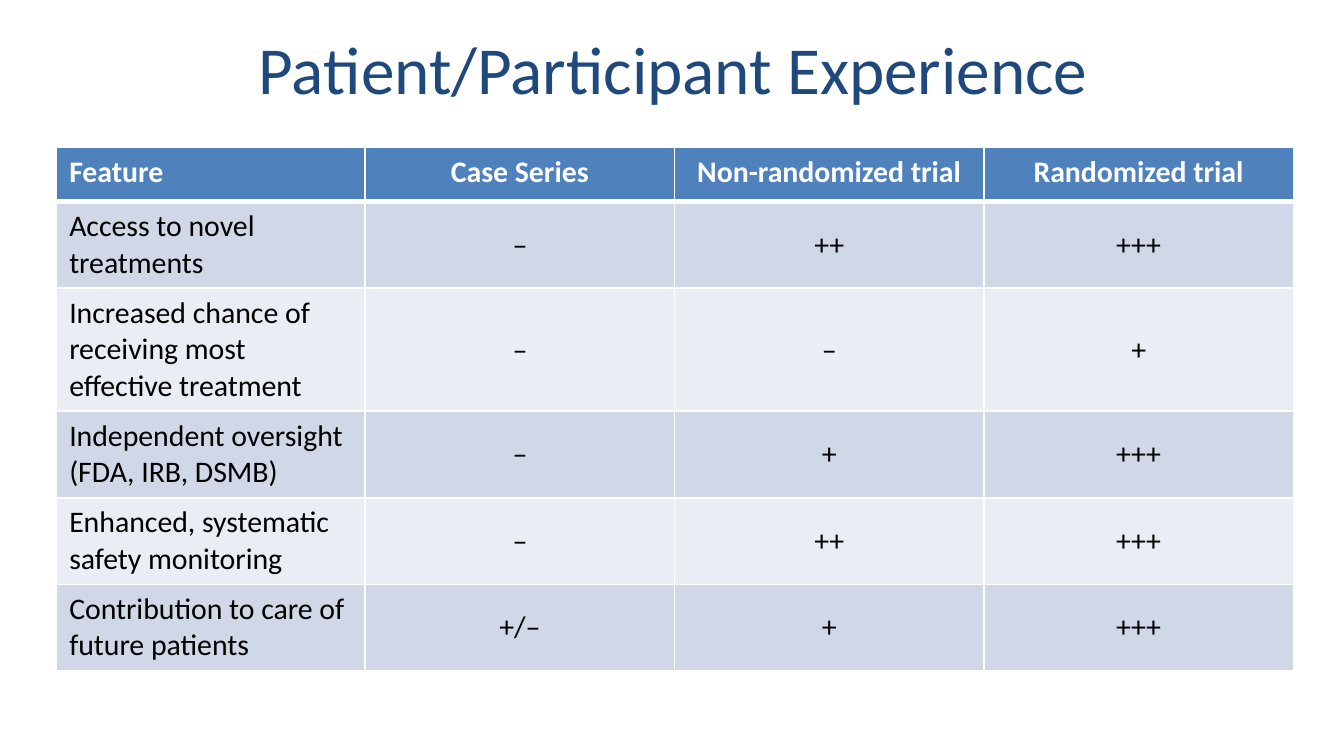
"""Build a slide comparing patient experience across study designs."""
from lxml import etree
from pptx import Presentation
from pptx.dml.color import RGBColor
from pptx.enum.text import MSO_ANCHOR, PP_ALIGN
from pptx.oxml.ns import qn
from pptx.util import Pt

LEFT, CENTER = PP_ALIGN.LEFT, PP_ALIGN.CENTER
TOP, MIDDLE = MSO_ANCHOR.TOP, MSO_ANCHOR.MIDDLE

TITLE = "Patient/Participant Experience"
HEADINGS = ("Feature", "Case Series", "Non-randomized trial", "Randomized trial")
RATINGS = [
    ("Access to novel treatments", "–", "++", "+++"),
    ("Increased chance of receiving most effective treatment", "–", "–", "+"),
    ("Independent oversight (FDA, IRB, DSMB)", "–", "+", "+++"),
    ("Enhanced, systematic safety monitoring", "–", "++", "+++"),
    ("Contribution to care of future patients", "+/–", "+", "+++"),
]
THEME = {
    "font": "Calibri", "title_size": 36, "body_size": 16,
    "title": "1F497D", "heading": "FFFFFF", "body": "000000",
    "heading_fill": "4F81BD", "bands": ("D0D8E8", "E9EDF4"),
    "border": "FFFFFF", "thin": 1, "thick": 3,
}
SLIDE_SIZE = (720, 405)
TITLE_BOX = (13.7, 8.6, 694, 55.4)
TABLE_BOX = (29.9, 78.9, 663, 276.5)
MIN_ROW_HEIGHT = 29.2


def style(paragraph, size, color, align, bold=False):
    paragraph.alignment = align
    paragraph.font.name = THEME["font"]
    paragraph.font.size = Pt(size)
    paragraph.font.bold = bold
    paragraph.font.color.rgb = RGBColor.from_string(color)


def draw_borders(cell, widths):
    properties = cell._tc.get_or_add_tcPr()
    for side, width in widths.items():
        line = etree.SubElement(properties, qn(f"a:ln{side}"), w=str(Pt(width)))
        fill = etree.SubElement(line, qn("a:solidFill"))
        etree.SubElement(fill, qn("a:srgbClr"), val=THEME["border"])


def format_cell(cell, text, row, column):
    is_heading = row == 0
    widths = dict.fromkeys("LRTB", THEME["thin"])
    if row < 2:
        widths["B" if is_heading else "T"] = THEME["thick"]
    draw_borders(cell, widths)
    fill = THEME["heading_fill"] if is_heading else THEME["bands"][(row - 1) % 2]
    cell.fill.solid()
    cell.fill.fore_color.rgb = RGBColor.from_string(fill)
    cell.vertical_anchor = TOP if is_heading or column == 0 else MIDDLE
    cell.text = text
    style(cell.text_frame.paragraphs[0], THEME["body_size"],
          THEME["heading" if is_heading else "body"],
          CENTER if column else LEFT, is_heading)


def add_title(slide):
    title = slide.shapes.title
    title.left, title.top, title.width, title.height = map(Pt, TITLE_BOX)
    title.text_frame.text = TITLE
    title.text_frame.vertical_anchor = MIDDLE
    style(title.text_frame.paragraphs[0], THEME["title_size"], THEME["title"], CENTER)


def add_ratings(slide):
    rows = [HEADINGS, *RATINGS]
    frame = slide.shapes.add_table(len(rows), len(HEADINGS), *map(Pt, TABLE_BOX))
    for row, texts in enumerate(rows):
        frame.table.rows[row].height = Pt(MIN_ROW_HEIGHT)
        for column, text in enumerate(texts):
            format_cell(frame.table.cell(row, column), text, row, column)
    frame.height = Pt(TABLE_BOX[3])


def main():
    deck = Presentation()
    deck.slide_width, deck.slide_height = map(Pt, SLIDE_SIZE)
    slide = deck.slides.add_slide(deck.slide_layouts.get_by_name("Title Only"))
    add_title(slide)
    add_ratings(slide)
    deck.save("out.pptx")


if __name__ == "__main__":
    main()
